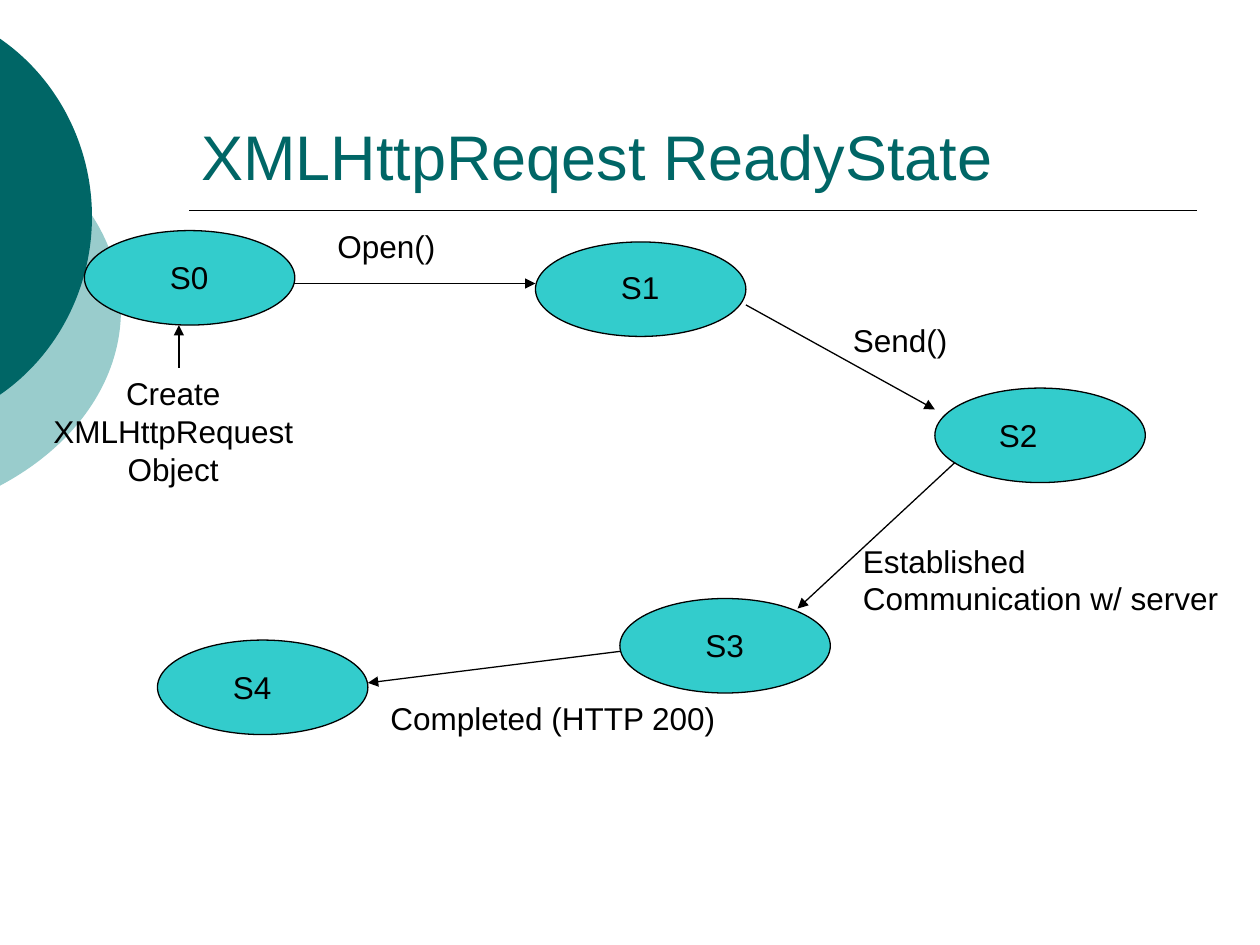
import dataclasses
import pptx
import pptx.dml.color
import pptx.enum.shapes
import pptx.enum.text
import pptx.oxml.ns
import pptx.util
from lxml import etree

Inches = pptx.util.Inches
Pt = pptx.util.Pt
qn = pptx.oxml.ns.qn
Point = tuple[float, float]
Box = tuple[float, float, float, float]
Align = pptx.enum.text.PP_ALIGN
Anchor = pptx.enum.text.MSO_ANCHOR


@dataclasses.dataclass
class State:
    name: str
    spot: Point
    text: Point


@dataclasses.dataclass
class Label:
    text: str
    box: Box
    align: Align = Align.LEFT
    wrap: bool = True


@dataclasses.dataclass
class Arrow:
    start: Point
    end: Point


@dataclasses.dataclass
class Disc:
    frame: Box
    curve: tuple[Point, Point, Point, Point]
    fill: str


DISCS = [
    Disc((-3.54, 0.75, 4.5, 3.42),
         ((-0.01, 1.06), (0.6, 1.38), (0.96, 1.9), (0.96, 2.46)), "99CCCC"),
    Disc((-2.65, 0, 3.38, 3.45),
         ((-0.01, 0.3), (0.46, 0.62), (0.73, 1.16), (0.73, 1.72)), "006666"),
]
STATES = [
    State("S0", (0.67, 1.83), (1.25, 2)),
    State("S1", (4.25, 1.92), (4.83, 2.08)),
    State("S2", (7.42, 3.08), (7.83, 3.25)),
    State("S3", (4.92, 4.75), (5.5, 4.92)),
    State("S4", (1.25, 5.08), (1.75, 5.25)),
]
ARROWS = [
    Arrow((2.33, 2.25), (4.25, 2.25)),
    Arrow((5.92, 2.42), (7.42, 3.25)),
    Arrow((7.58, 3.67), (6.33, 4.83)),
    Arrow((4.92, 5.17), (2.92, 5.42)),
    Arrow((1.42, 2.92), (1.42, 2.58)),
]
LABELS = [
    Label("Create XMLHttpRequest Object", (0.25, 2.92, 2.25, 1), Align.CENTER),
    Label("Open()", (2.58, 1.75, 2.33, 0.4)),
    Label("Send()", (6.67, 2.5, 2.33, 0.4)),
    Label("Established Communication w/ server", (6.75, 4.25, 3.25, 0.7)),
    Label("Completed (HTTP 200)", (3, 5.5, 2.79, 0.4), wrap=False),
]


def tint(code: str) -> pptx.dml.color.RGBColor:
    """Turn a hex string into a colour."""
    return pptx.dml.color.RGBColor.from_string(code)


def write(slide, text: str, box: Box, *, size: float = 18, color: str = "000000",
          align=Align.LEFT, anchor=Anchor.TOP, wrap: bool = True) -> None:
    """Place a text box with one formatted paragraph."""
    frame = slide.shapes.add_textbox(*map(Inches, box)).text_frame
    frame.word_wrap = wrap
    frame.vertical_anchor = anchor
    para = frame.paragraphs[0]
    para.alignment = align
    run = para.add_run()
    run.text = text
    run.font.name = "Arial"
    run.font.size = Pt(size)
    run.font.color.rgb = tint(color)


def draw_disc(slide, disc: Disc) -> None:
    """Draw a disc cut off by the left edge, its lower half mirrored."""
    a, b, c, d = disc.curve
    low_c, low_b, low_a = ((x, 2 * d[1] - y) for x, y in (c, b, a))
    left, top, wide, high = map(Inches, disc.frame)
    pen = slide.shapes.build_freeform(0, 0)
    pen.add_line_segments([(wide, 0), (wide, high)], close=True)
    shape = pen.convert_to_shape(left, top)
    track = shape._element.spPr.find(".//" + qn("a:path"))
    for node in list(track):
        track.remove(node)
    steps = [("moveTo", [a]), ("cubicBezTo", [b, c, d]),
             ("cubicBezTo", [low_c, low_b, low_a]), ("close", [])]
    for tag, dots in steps:
        node = etree.SubElement(track, qn("a:" + tag))
        for x, y in dots:
            etree.SubElement(node, qn("a:pt"), x=str(int(Inches(x) - left)),
                             y=str(int(Inches(y) - top)))
    shape.shadow.inherit = False
    shape.fill.solid()
    shape.fill.fore_color.rgb = tint(disc.fill)
    shape.line.fill.background()


def draw_oval(slide, state: State) -> None:
    """Draw the oval of a state."""
    shape = slide.shapes.add_shape(pptx.enum.shapes.MSO_SHAPE.OVAL,
                                   *map(Inches, (*state.spot, 1.67, 0.75)))
    shape.shadow.inherit = False
    shape.fill.solid()
    shape.fill.fore_color.rgb = tint("33CCCC")
    shape.line.color.rgb = tint("000000")
    shape.line.width = Pt(0.75)


def draw_line(slide, start: Point, end: Point, width: float = 0.75,
              head: bool = True) -> None:
    """Draw a straight line, with an arrowhead at its end if asked."""
    line = slide.shapes.add_connector(pptx.enum.shapes.MSO_CONNECTOR.STRAIGHT,
                                      *map(Inches, (*start, *end)))
    line.line.color.rgb = tint("000000")
    line.line.width = Pt(width)
    props = line._element.spPr
    if head:
        etree.SubElement(props.find(qn("a:ln")), qn("a:tailEnd"), type="triangle")
    etree.SubElement(props, qn("a:effectLst"))


def main() -> None:
    """Build and save the slide."""
    deck = pptx.Presentation()
    deck.slide_width, deck.slide_height = Inches(10), Inches(7.5)
    slide = deck.slides.add_slide(deck.slide_layouts[6])
    for disc in DISCS:
        draw_disc(slide, disc)
    draw_line(slide, (1.5, 1.67), (9.5, 1.67), width=1, head=False)
    write(slide, "XMLHttpReqest ReadyState", (1.5, 0.33, 8, 1.25),
          size=36, color="006666", anchor=Anchor.BOTTOM)
    for state in STATES:
        draw_oval(slide, state)
    for arrow in ARROWS:
        draw_line(slide, arrow.start, arrow.end)
    for state in STATES:
        write(slide, state.name, (*state.text, 0.83, 0.4))
    for label in LABELS:
        write(slide, label.text, label.box, align=label.align, wrap=label.wrap)
    deck.save("out.pptx")


if __name__ == "__main__":
    main()
